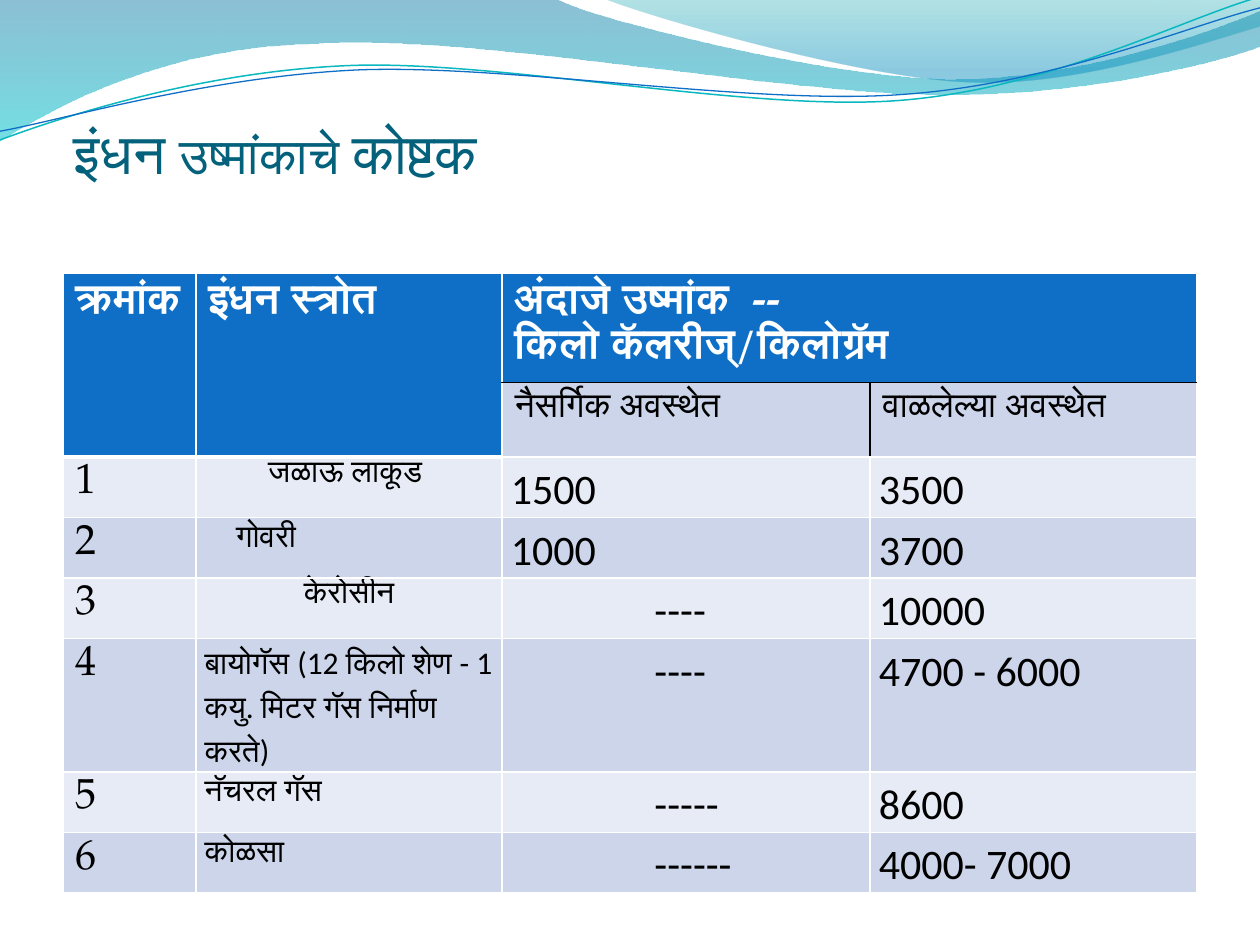
from math import cos, radians, sin

from lxml.etree import SubElement
from pptx import Presentation
from pptx.dml.color import RGBColor
from pptx.enum.lang import MSO_LANGUAGE_ID as Lang
from pptx.enum.text import MSO_ANCHOR as Anchor, PP_ALIGN as Align
from pptx.oxml.ns import qn
from pptx.util import Pt

WHITE = RGBColor(0xFF, 0xFF, 0xFF)
BLACK = RGBColor(0x00, 0x00, 0x00)
BLUE = RGBColor(0x0F, 0x6F, 0xC6)
TEAL = RGBColor(0x0A, 0xB8, 0xBF)
TITLE = RGBColor(0x04, 0x61, 0x7B)
LIGHT = RGBColor(0xE7, 0xEB, 0xF5)
DARK = RGBColor(0xCC, 0xD5, 0xEA)
SERIF, SANS, ROBOTO = "TeX Gyre Pagella", "Calibri", "Roboto"
TILT = 2.7

prs = Presentation()
prs.slide_width, prs.slide_height = Pt(720), Pt(540)
s = prs.slides.add_slide(prs.slide_layouts[6])


def add_curve(start, segments, close):
    emu = [(Pt(x), Pt(y)) for x, y in [start] + [pt for seg in segments for pt in seg]]
    fb = s.shapes.build_freeform(*emu[0])
    fb.add_line_segments(emu[1:], close=close)
    sp = fb.convert_to_shape()
    sp.shadow.inherit = False
    lines = iter(list(sp.element.iter(qn("a:lnTo"))))
    for seg in segments:
        first = next(lines)
        if len(seg) == 3:
            first.tag = qn("a:cubicBezTo")
            for line in (next(lines), next(lines)):
                first.append(line[0])
                line.getparent().remove(line)
    return sp


def write_cell(cell, lines, size, font, color=BLACK, bold=False):
    tf = cell.text_frame
    cell.margin_bottom = 0
    for i, runs in enumerate(lines):
        p = tf.paragraphs[0] if i == 0 else tf.add_paragraph()
        p.font.size, p.font.bold, p.font.name = Pt(size), bold, font
        p.font.color.rgb = color
        for text, name in runs:
            r = p.add_run()
            r.text = text
            if name != font:
                r.font.name = name
    return tf.paragraphs[0]


waves = [
    ((0, 0), [((317, -1),),
              ((343, 12), (478, 45), (546, 45)),
              ((614, 45), (690, 19), (720, 6)),
              ((721, 26),),
              ((708, 32), (626, 55), (537, 54)),
              ((447, 54), (275, 20), (185, 24.5)),
              ((93, 26), (33, 60), (-1, 81))],
     [(0, RGBColor(0x00, 0x74, 0xA1), 45), (1, RGBColor(0x00, 0xC6, 0xCF), 55)]),
    ((345, -1), [((366, 8), (491, 45), (554, 47)),
                 ((616, 50), (692, 23), (720, 15)),
                 ((720, 0),)],
     [(0, RGBColor(0x00, 0xA1, 0xA9), 30), (0.8, RGBColor(0x00, 0x8B, 0xBF), 45)]),
]
for start, segments, stops in waves:
    sp = add_curve(start, segments, True)
    sp.line.fill.background()
    sp.fill.gradient()
    sp.fill.gradient_angle = 270
    for stop, (pos, color, opacity) in zip(sp.fill.gradient_stops, stops):
        stop.position = pos
        stop.color.rgb = color
    for clr, (pos, color, opacity) in zip(sp.element.spPr.iter(qn("a:srgbClr")), stops):
        SubElement(clr, qn("a:alpha"), val=str(opacity * 1000))

strands = [
    (41.5, (0, 80), [((35, 67), (114, 41), (199, 37.5)),
                     ((284, 34), (427, 64), (513, 57.5)),
                     ((600, 51), (675, 11), (719, -1.5))], TEAL, 0.85),
    (42.5, (0, 75), [((34, 69), (118, 44), (204, 40)),
                     ((290, 36.5), (430, 60.5), (516, 54)),
                     ((602, 48), (678, 15), (720, 4.5))], BLUE, 0.75),
]
co, si = cos(radians(TILT)), sin(radians(TILT))
for mid, start, segments, color, width in strands:
    level = [[(360 + (x - 360) * co - (y - mid) * si, mid + (x - 360) * si + (y - mid) * co)
              for x, y in seg] for seg in [(start,)] + segments]
    sp = add_curve(level[0][0], level[1:], False)
    sp.rotation = 360 - TILT
    sp.fill.background()
    sp.line.color.rgb = color
    sp.line.width = Pt(width)

sp = s.shapes.add_textbox(Pt(42), Pt(72), Pt(642), Pt(72))
tf = sp.text_frame
tf.word_wrap = True
tf.vertical_anchor = Anchor.BOTTOM
tf.margin_left = tf.margin_right = tf.margin_top = 0
tf.margin_bottom = Pt(38)
p = tf.paragraphs[0]
p.font.name = SANS
p.font.color.rgb = TITLE
for text, size in [("इंधन ", 32.4), ("उष्मांकाचे ", 28.8), ("कोष्टक", 32.4)]:
    r = p.add_run()
    r.text = text
    r.font.size = Pt(size)
    r.font.language_id = Lang.MARATHI

widths = [76, 175, 210.2, 186.5]
heights = [62.3, 42.5, 34.6, 34.6, 34.6, 76.2, 34.6, 34.6]
table = s.shapes.add_table(len(heights), len(widths), Pt(36), Pt(156.4),
                           Pt(sum(widths)), Pt(sum(heights))).table
table.first_row = table.horz_banding = False
for col, width in zip(table.columns, widths):
    col.width = Pt(width)
for row, height in zip(table.rows, heights):
    row.height = Pt(height)

table.cell(0, 0).merge(table.cell(1, 0))
table.cell(0, 1).merge(table.cell(1, 1))
table.cell(0, 2).merge(table.cell(0, 3))
headers = [["क्रमांक"], ["इंधन स्त्रोत"], ["अंदाजे उष्मांक  --", "किलो कॅलरीज्/किलोग्रॅम"]]
for c, lines in enumerate(headers):
    write_cell(table.cell(0, c), [[(line, SERIF)] for line in lines], 24, SERIF, WHITE, True)
for c, text in [(2, "नैसर्गिक अवस्थेत"), (3, "वाळलेल्या अवस्थेत")]:
    write_cell(table.cell(1, c), [[(text, SERIF)]], 20, SERIF)

fuels = [
    ([("जळाऊ लाकूड ", ROBOTO)], "1500", "3500"),
    ([("गोवरी", SANS)], "1000", "3700"),
    ([("केरोसीन", ROBOTO)], "----", "10000"),
    ([("बायोगॅस (12 ", SANS), ("किलो ", SERIF),
      ("शेण - 1 कयु. मिटर गॅस निर्माण करते)", SANS)], "----", "4700 - 6000"),
    ([("नॅचरल गॅस", SANS)], "-----", "8600"),
    ([("कोळसा", SANS)], "------", "4000- 7000"),
]
for n, (fuel, natural, dried) in enumerate(fuels, 1):
    write_cell(table.cell(n + 1, 0), [[(str(n), SERIF)]], 24, SERIF)
    for c, runs in enumerate([fuel, [(natural, SANS)], [(dried, SANS)]], 1):
        cell = table.cell(n + 1, c)
        cell.margin_left = cell.margin_right = Pt(5)
        cell.margin_top = 0
        font = runs[0][1]
        p = write_cell(cell, [runs], 18 if c == 1 else 24, font)
        if font == ROBOTO:
            p.alignment = Align.CENTER
        else:
            p.line_spacing = 1.15
        indent = 82 if runs[0][0].startswith("--") else 18 if runs[0][0] == "गोवरी" else 0
        if indent:
            p._p.get_or_add_pPr().set("marL", str(Pt(indent)))

for r in range(len(heights)):
    for c in range(len(widths)):
        cell = table.cell(r, c)
        header = r == 0 or (r == 1 and c < 2)
        edges = {side: (WHITE, 1) for side in "LRTB"}
        if r < 2 and c < 2:
            edges["B"] = (WHITE, 3)
        elif r == 0:
            edges["B"] = (BLACK, 1)
        elif r == 1:
            edges["T"] = edges["R" if c == 2 else "L"] = (BLACK, 1)
        elif r == 2 and c < 2:
            edges["T"] = (WHITE, 3)
        tcPr = cell._tc.get_or_add_tcPr()
        for side, (color, width) in edges.items():
            ln = SubElement(tcPr, qn(f"a:ln{side}"), w=str(Pt(width)))
            SubElement(SubElement(ln, qn("a:solidFill")), qn("a:srgbClr"), val=str(color))
        cell.fill.solid()
        cell.fill.fore_color.rgb = BLUE if header else LIGHT if r % 2 == 0 else DARK

prs.save("out.pptx")
